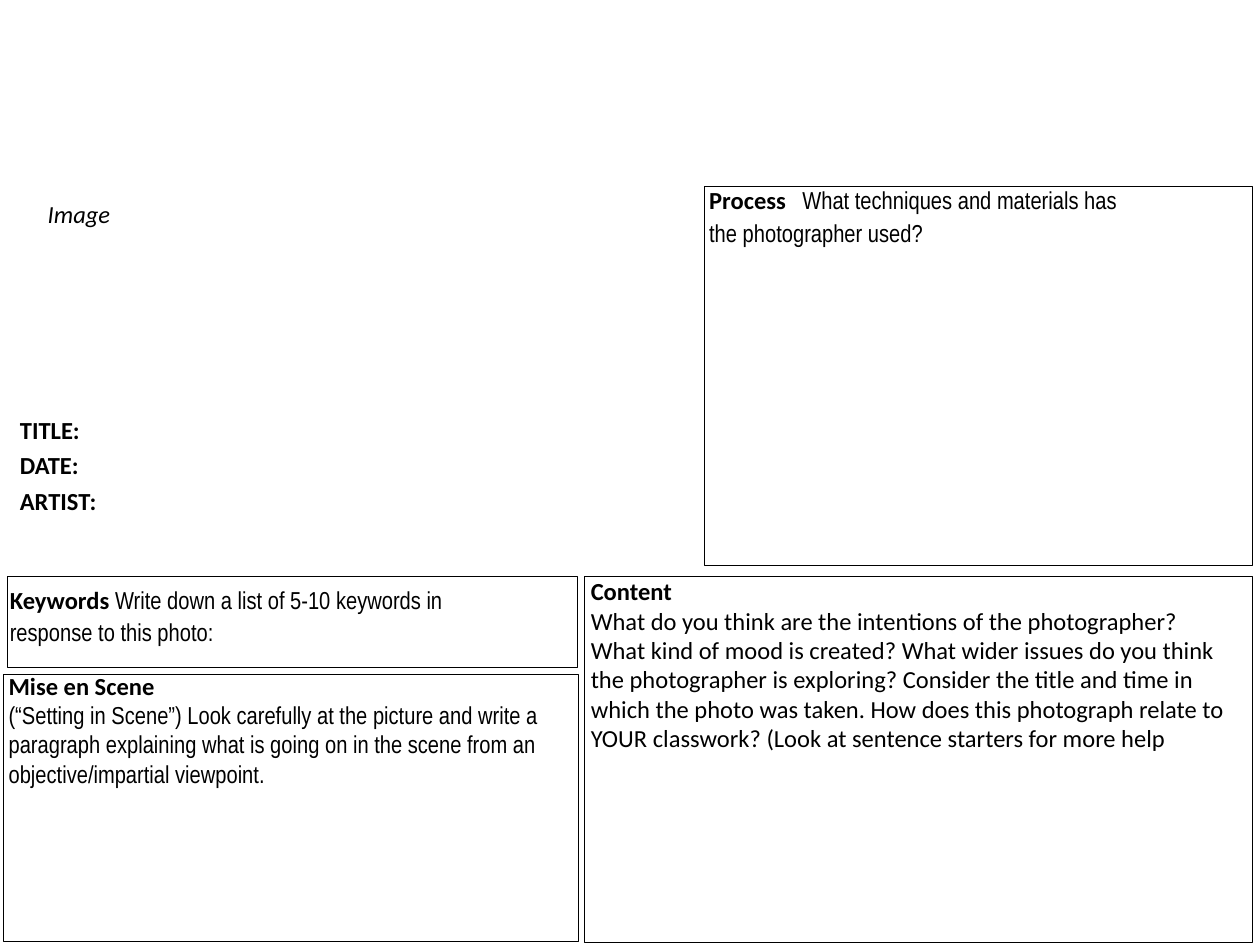
from lxml.etree import SubElement
from pptx import Presentation
from pptx.dml.color import RGBColor
from pptx.enum.shapes import MSO_SHAPE
from pptx.enum.text import MSO_AUTO_SIZE
from pptx.oxml.ns import qn
from pptx.util import Inches, Pt

COLORS = {"ink": "000000"}
BODY, NARROW = "Calibri", "Arial Narrow"
HEAD = {"name": BODY, "bold": True}
PROMPT = {"name": NARROW, "bold": False}
PLAIN = {"name": BODY, "bold": False}
CAPTION = {"name": BODY, "italic": True}

# Frames as left, top, width, height in inches
FRAMES = [
    (0.03, 5.35, 4.56, 2.12),
    (0.06, 4.57, 4.52, 0.73),
    (5.59, 1.48, 4.35, 3.01),
    (4.64, 4.57, 5.30, 2.91),
]

# Each text: box, tab stop, paragraphs of (line spacing, runs)
TEXTS = [
    ((-0.03, 5.25, 4.6, 1.07), None, [
        (1.1, [("Mise en Scene", HEAD)]),
        (1.0, [("(“Setting in Scene”) Look carefully at the picture and write a "
                "paragraph explaining what is going on in the scene from an "
                "objective/impartial viewpoint.", PROMPT)]),
    ]),
    ((5.53, 1.4, 3.46, 0.6), 0.74, [
        (1.1, [("Process\t", HEAD),
               ("What techniques and materials has the photographer used?", PROMPT)]),
    ]),
    ((-0.02, 4.57, 4.23, 0.6), None, [
        (1.1, [("Keywords ", HEAD),
               ("Write down a list of 5-10 keywords in response to this photo:", PROMPT)]),
    ]),
    ((4.59, 4.5, 5.25, 1.54), None, [
        (1.1, [("Content", HEAD)]),
        (1.0, [("What do you think are the intentions of the photographer? What kind "
                "of mood is created? What wider issues do you think the photographer "
                "is exploring? Consider the title and time in which the photo was "
                "taken. How does this photograph relate to YOUR classwork? (Look at "
                "sentence starters for more help", PLAIN)]),
    ]),
    ((0.06, 3.2, 2.77, 0.93), None, [
        (1.2, [(label, HEAD)]) for label in ("TITLE:", "DATE:", "ARTIST:")
    ]),
    ((0.28, 1.53, 4.61, 0.34), None, [(1.0, [("Image", CAPTION)])]),
]


def ink():
    return RGBColor.from_string(COLORS["ink"])


def add_frame(slide, box):
    sp = slide.shapes.add_shape(MSO_SHAPE.RECTANGLE, *map(Inches, box))
    sp.shadow.inherit = False
    sp.fill.background()
    sp.line.color.rgb = ink()
    sp.line.width = Pt(0.25)


def add_text(slide, box, tab, paragraphs):
    tf = slide.shapes.add_textbox(*map(Inches, box)).text_frame
    tf.word_wrap = True
    tf.auto_size = MSO_AUTO_SIZE.SHAPE_TO_FIT_TEXT
    for i, (spacing, runs) in enumerate(paragraphs):
        p = tf.add_paragraph() if i else tf.paragraphs[0]
        p.line_spacing = spacing
        if tab:
            tabs = SubElement(p._p.get_or_add_pPr(), qn("a:tabLst"))
            SubElement(tabs, qn("a:tab"), pos=str(Inches(tab)), algn="l")
        for text, style in runs:
            r = p.add_run()
            r.text = text
            r.font.size = Pt(14)
            r.font.color.rgb = ink()
            for name, value in style.items():
                setattr(r.font, name, value)


def main():
    prs = Presentation()
    prs.slide_width, prs.slide_height = Inches(10), Inches(7.5)
    slide = prs.slides.add_slide(prs.slide_layouts[6])
    for box in FRAMES:
        add_frame(slide, box)
    for box, tab, paragraphs in TEXTS:
        add_text(slide, box, tab, paragraphs)
    prs.save("out.pptx")


if __name__ == "__main__":
    main()
